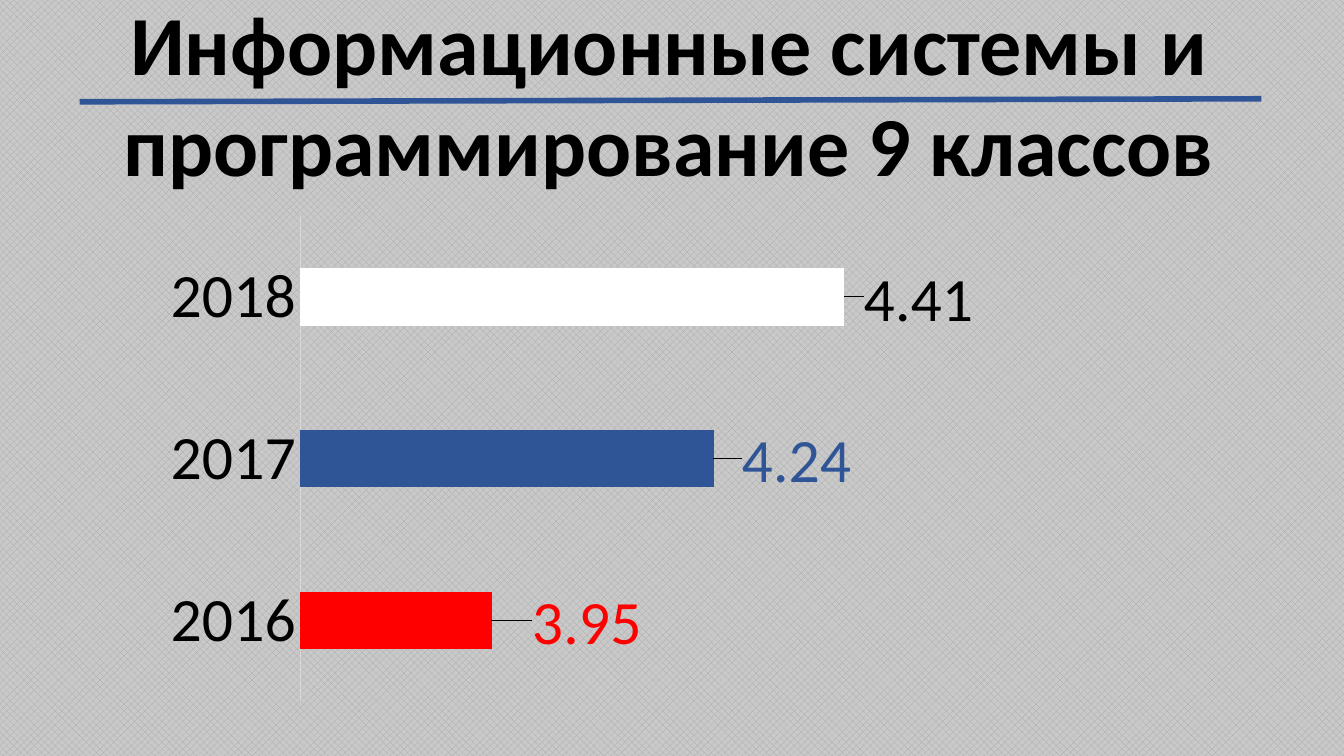
"""Build a slide with a bar chart of mean grades for three years."""
from dataclasses import dataclass

from lxml.etree import SubElement
from pptx import Presentation
from pptx.chart.data import CategoryChartData
from pptx.dml.color import RGBColor
from pptx.enum.chart import XL_CHART_TYPE, XL_LABEL_POSITION, XL_TICK_MARK
from pptx.enum.dml import MSO_PATTERN
from pptx.enum.shapes import MSO_CONNECTOR
from pptx.enum.text import MSO_AUTO_SIZE, PP_ALIGN
from pptx.oxml import parse_xml
from pptx.oxml.ns import nsdecls, qn
from pptx.util import Inches, Pt


@dataclass(frozen=True)
class Theme:
    font: str = "Calibri"
    black: RGBColor = RGBColor(0, 0, 0)
    white: RGBColor = RGBColor(255, 255, 255)
    blue: RGBColor = RGBColor(0x2F, 0x55, 0x97)
    red: RGBColor = RGBColor(255, 0, 0)
    bar: RGBColor = RGBColor(0x5B, 0x9B, 0xD5)
    axis: RGBColor = RGBColor(0xD9, 0xD9, 0xD9)
    weave: RGBColor = RGBColor(0xA6, 0xA6, 0xA6)
    back: RGBColor = RGBColor(0xC9, 0xC9, 0xC9)
    title: Pt = Pt(60)
    label: Pt = Pt(44)
    small: Pt = Pt(10)


theme = Theme()


def style(font, size, color):
    font.name = theme.font
    font.size = size
    font.color.rgb = color


def layout(**parts):
    tags = "".join(f'<c:{key} val="{val}"/>' for key, val in parts.items())
    return parse_xml(
        f'<c:layout {nsdecls("c")}><c:manualLayout>{tags}</c:manualLayout></c:layout>'
    )


deck = Presentation()
deck.slide_width, deck.slide_height = Inches(13.33), Inches(7.5)
slide = deck.slides.add_slide(deck.slide_layouts[6])

fill = slide.background.fill
fill.patterned()
fill.pattern = MSO_PATTERN.PERCENT_50
fill.fore_color.rgb = theme.weave
fill.back_color.rgb = theme.back

rule = slide.shapes.add_connector(
    MSO_CONNECTOR.STRAIGHT, Inches(0.79), Inches(1.01), Inches(12.51), Inches(0.98)
)
rule.line.color.rgb = theme.blue
rule.line.width = Pt(4)
SubElement(rule.element.spPr, qn("a:effectLst"))

years = [
    ("2016", 3.95, theme.red, theme.red, 0.035),
    ("2017", 4.24, theme.blue, theme.blue, 0.023),
    ("2018", 4.41, theme.white, theme.black, 0.015),
]
data = CategoryChartData(number_format="General")
data.categories = [year[0] for year in years]
data.add_series("Series 1", [year[1] for year in years])
chart = slide.shapes.add_chart(
    XL_CHART_TYPE.BAR_CLUSTERED,
    Inches(0.79), Inches(1.99), Inches(10.27), Inches(5.12), data,
).chart
chart.has_title = False
chart.has_legend = False
style(chart.font, theme.small, theme.black)

years_axis = chart.category_axis
years_axis.major_tick_mark = XL_TICK_MARK.NONE
years_axis.format.line.color.rgb = theme.axis
years_axis.format.line.width = Pt(0.75)
style(years_axis.tick_labels.font, theme.label, theme.black)

grades = chart.value_axis
grades.minimum_scale, grades.maximum_scale = 3.7, 4.5
grades.has_major_gridlines = False
grades.visible = False

area = chart.element.xpath(".//c:plotArea")[0]
for old in area.findall(qn("c:layout")):
    area.remove(old)
area.insert(0, layout(
    layoutTarget="inner", xMode="edge", yMode="edge", x=0.213, y=0.03, w=0.592, h=0.94
))

plot = chart.plots[0]
plot.gap_width = 182
plot.vary_by_categories = False
bars = plot.series[0]
bars.format.fill.solid()
bars.format.fill.fore_color.rgb = theme.bar
for spot, (year, grade, color, ink, shift) in enumerate(years):
    point = bars.points[spot]
    point.format.fill.solid()
    point.format.fill.fore_color.rgb = color
    label = point.data_label
    style(label.font, theme.label, ink)
    label.position = XL_LABEL_POSITION.OUTSIDE_END
    mark = chart.element.xpath(".//c:dLbl")[spot]
    mark.insert(1, layout(x=shift, y=0.006))

bars.data_labels.show_value = True
labels = chart.element.xpath(".//c:ser/c:dLbls")[0]
for old in labels.findall(qn("c:showLeaderLines")):
    labels.remove(old)
SubElement(labels, qn("c:showLeaderLines")).set("val", "1")

box = slide.shapes.add_textbox(Inches(0.61), Inches(-0.13), Inches(12.05), Inches(2.12))
frame = box.text_frame
frame.word_wrap = True
frame.auto_size = MSO_AUTO_SIZE.SHAPE_TO_FIT_TEXT
title = frame.paragraphs[0]
title.alignment = PP_ALIGN.CENTER
run = title.add_run()
run.text = "Информационные системы и программирование 9 классов"
run.font.bold = True
style(run.font, theme.title, theme.black)

deck.save("out.pptx")
